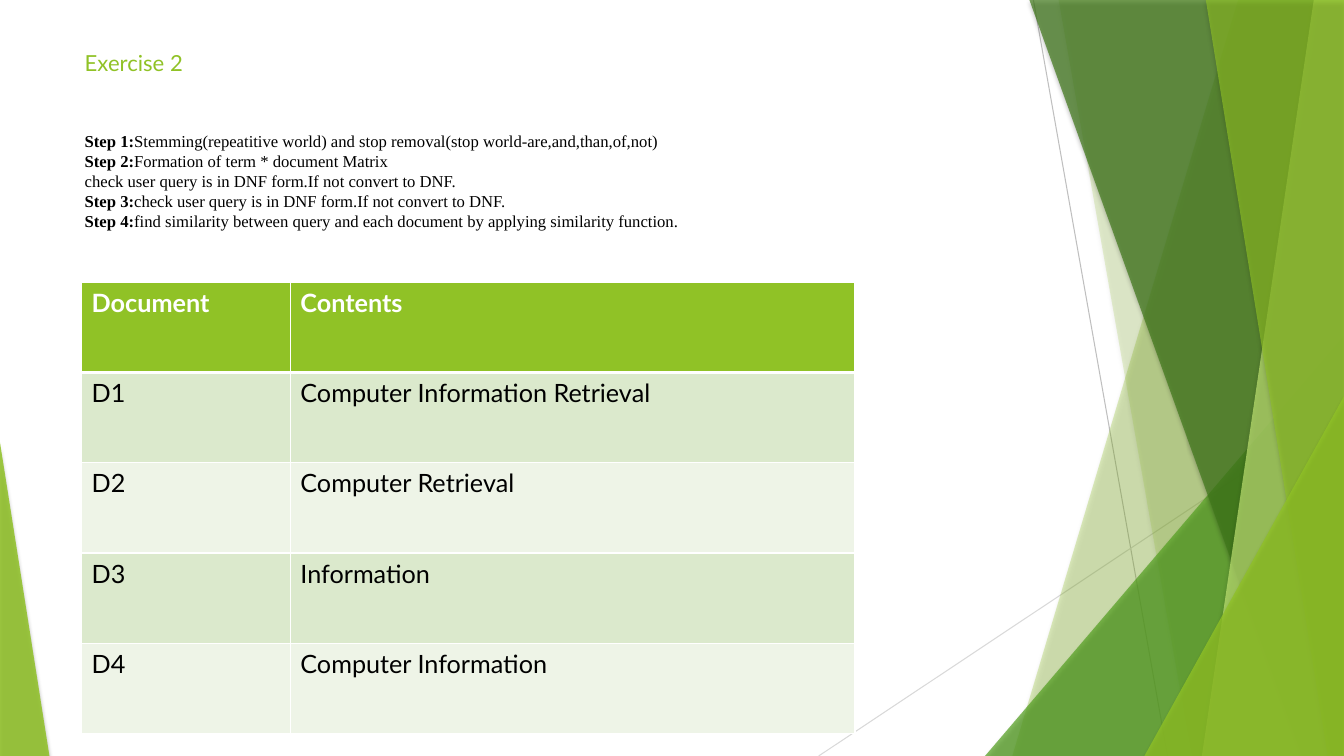
from dataclasses import dataclass

from lxml.etree import SubElement
from pptx import Presentation
from pptx.dml.color import RGBColor
from pptx.enum.shapes import MSO_CONNECTOR, MSO_SHAPE
from pptx.enum.text import MSO_ANCHOR, MSO_AUTO_SIZE, PP_ALIGN
from pptx.oxml.ns import qn
from pptx.util import Inches, Pt


@dataclass(frozen=True)
class Theme:
    """Colours, fonts and type sizes of the slide."""
    lime: str = "90C226"
    green: str = "54A021"
    forest: str = "3F7819"
    pale: str = "C0E474"
    band: str = "DBE9CC"
    band_light: str = "EEF4E7"
    line: str = "BFBFBF"
    line_light: str = "D9D9D9"
    white: str = "FFFFFF"
    black: str = "000000"
    sans: str = "Lato"
    serif: str = "Times New Roman"
    title: float = 15.8
    step: float = 11.9
    table: float = 18


T = Theme()

STEPS = [
    ("Step 1:", "Stemming(repeatitive world) and stop removal(stop world-are,and,than,of,not)"),
    ("Step 2:", "Formation of term * document Matrix"),
    ("", "check user query is in DNF form.If not convert to DNF."),
    ("Step 3:", "check user query is in DNF form.If not convert to DNF."),
    ("Step 4:", "find similarity between query and each document by applying similarity function."),
]
DOCUMENTS = [
    ("Document", "Contents"),
    ("D1", "Computer Information Retrieval"),
    ("D2", "Computer Retrieval"),
    ("D3", "Information"),
    ("D4", "Computer Information"),
]


def add_text(p, text, font=T.sans, size=T.table, color=T.black, bold=False):
    """Append one formatted run to a paragraph."""
    r = p.add_run()
    r.text = text
    r.font.name = font
    r.font.size = Pt(size)
    r.font.bold = bold
    r.font.color.rgb = RGBColor.from_string(color)


def add_color(parent, color, alpha=100):
    """Append a colour element with its opacity in percent."""
    clr = SubElement(parent, qn("a:srgbClr"), val=color)
    SubElement(clr, qn("a:alpha"), val=str(alpha * 1000))


def style_facet(sp, color, alpha):
    """Give a facet its translucent fill and soft shadow."""
    sp.fill.solid()
    sp.fill.fore_color.rgb = RGBColor.from_string(color)
    clr = sp.fill._xPr.find(qn("a:solidFill"))[0]
    SubElement(clr, qn("a:alpha"), val=str(alpha * 1000))
    sp.line.fill.background()
    sp.shadow.inherit = False
    effects = sp._element.spPr.find(qn("a:effectLst"))
    shadow = SubElement(effects, qn("a:outerShdw"), blurRad=str(Pt(3)), dist=str(Pt(2)),
                        dir="5400000", rotWithShape="0")
    add_color(shadow, T.black, 35)


def add_line(s, x1, y1, x2, y2, color):
    """Draw a thin straight line."""
    ln = s.shapes.add_connector(MSO_CONNECTOR.STRAIGHT, *map(Inches, (x1, y1, x2, y2)))
    ln.line.color.rgb = RGBColor.from_string(color)
    ln.line.width = Pt(0.75)
    SubElement(ln._element.spPr, qn("a:effectLst"))


def add_band(s, box, top_width, bottom_width, color, alpha):
    """Draw a slanted band against the right edge of the box."""
    x, y, w, h = box
    right, bottom = x + w, y + h
    corners = [(right - top_width, y), (right, y), (right, bottom), (right - bottom_width, bottom)]
    pts = [(Inches(px), Inches(py)) for px, py in corners]
    fb = s.shapes.build_freeform(*pts[0])
    fb.add_line_segments(pts[1:], close=True)
    style_facet(fb.convert_to_shape(), color, alpha)


def add_wedge(s, box, apex, color, alpha):
    """Fill the box with a triangle whose apex is at the given fraction."""
    sp = s.shapes.add_shape(MSO_SHAPE.ISOSCELES_TRIANGLE, *map(Inches, box))
    sp.adjustments[0] = apex
    style_facet(sp, color, alpha)


def add_facets(s, box):
    """Draw the layered facets in the right-hand box."""
    x, y, w, h = box
    right, bottom = x + w, y + h

    def corner_wedge(width, height, color, alpha):
        """Place a triangle in the lower right corner."""
        add_wedge(s, (right - width, bottom - height, width, height), 1, color, alpha)

    add_line(s, right - 3.08, y, right - 1.75, bottom, T.line)
    add_line(s, right, y + 4.03, x, bottom, T.line_light)
    add_band(s, box, 1.05, 3.29, T.lime, 30)
    add_band(s, box, 2.83, 1.51, T.lime, 20)
    corner_wedge(3.56, 4.17, T.green, 72)
    add_band(s, box, 3.12, 0.42, T.forest, 70)
    add_band(s, box, 0.3, 1.41, T.pale, 70)
    add_band(s, box, 1.37, 0.16, T.lime, 65)
    corner_wedge(1.98, 3.57, T.lime, 80)


def add_title(s, box):
    """Fill the title placeholder with the heading and the steps."""
    sp = s.shapes.title
    sp.left, sp.top, sp.width, sp.height = map(Inches, box)
    tf = sp.text_frame
    tf.word_wrap = True
    tf.auto_size = MSO_AUTO_SIZE.NONE
    tf.vertical_anchor = MSO_ANCHOR.TOP
    p = tf.paragraphs[0]
    p.alignment = PP_ALIGN.LEFT
    add_text(p, "Exercise 2", size=T.title, color=T.lime)
    for i, (label, text) in enumerate(STEPS):
        p = tf.add_paragraph()
        p.alignment = PP_ALIGN.LEFT
        p.line_spacing = Pt(14.3)
        p.space_before = Pt(0 if i else 39)
        if label:
            add_text(p, label, font=T.serif, size=T.step, bold=True)
        add_text(p, text, font=T.serif, size=T.step)


def add_borders(cell, bottom):
    """Outline a cell in white with the given bottom width."""
    tc_pr = cell._tc.get_or_add_tcPr()
    for side, width in (("L", 0.96), ("R", 0.96), ("T", 0.96), ("B", bottom)):
        ln = SubElement(tc_pr, qn(f"a:ln{side}"), w=str(Pt(width)))
        add_color(SubElement(ln, qn("a:solidFill")), T.white)


def add_documents(s, box):
    """Build the table of documents and their contents."""
    table = s.shapes.add_table(len(DOCUMENTS), 2, *map(Inches, box)).table
    table.columns[0].width = Inches(2.07)
    table.columns[1].width = Inches(box[2] - 2.07)
    for i, row in enumerate(DOCUMENTS):
        head = i == 0
        fill = T.lime if head else (T.band_light, T.band)[i % 2]
        for j, text in enumerate(row):
            cell = table.cell(i, j)
            add_borders(cell, 3 if head else 0.96)
            cell.fill.solid()
            cell.fill.fore_color.rgb = RGBColor.from_string(fill)
            add_text(cell.text_frame.paragraphs[0], text, bold=head,
                     color=T.white if head else T.black)


def main():
    """Build and save the presentation."""
    prs = Presentation()
    prs.slide_width, prs.slide_height = Inches(13.33), Inches(7.5)
    s = prs.slides.add_slide(prs.slide_layouts[5])
    add_facets(s, (8.12, 0, 5.21, 7.5))
    add_wedge(s, (0, 4.39, 0.49, 3.11), 0, T.lime, 85)
    add_title(s, (0.74, 0.44, 9.4, 2.11))
    add_documents(s, (0.81, 2.8, 7.67, 4.48))
    prs.save("out.pptx")


if __name__ == "__main__":
    main()
